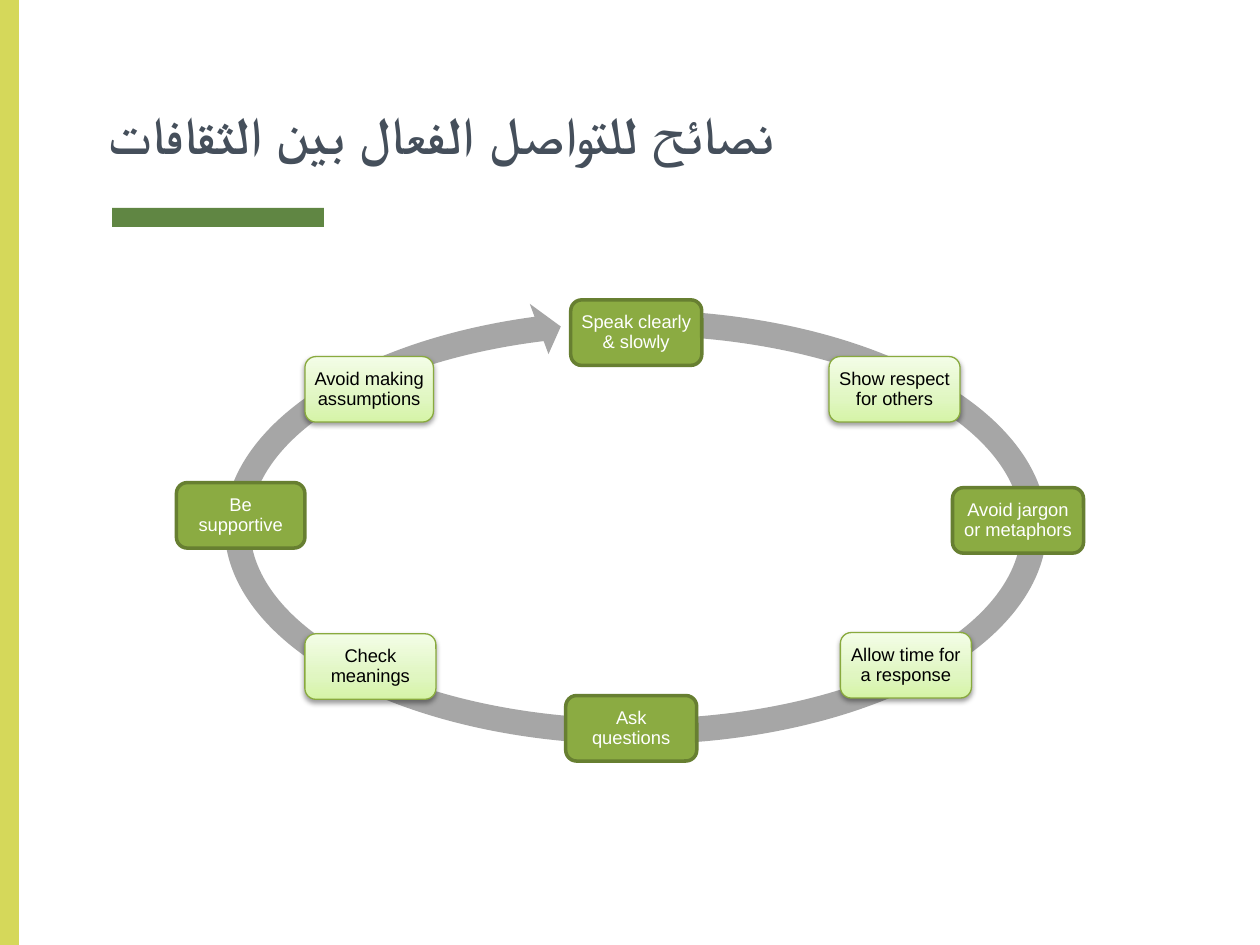
from lxml.etree import SubElement
from pptx import Presentation
from pptx.dml.color import RGBColor
from pptx.enum.shapes import MSO_SHAPE as Shape
from pptx.enum.text import MSO_ANCHOR as Anchor, MSO_AUTO_SIZE as AutoSize, PP_ALIGN as Align
from pptx.oxml.ns import qn
from pptx.util import Inches, Pt

PALE_STOPS = [(0, "D5F4A6"), (35, "E0F6C1"), (100, "F3FDE7")]
TIPS = [
    ("Speak clearly & slowly", 4.53, 2.38, 1.04),
    ("Show respect for others", 6.58, 2.83, 1.04),
    ("Avoid jargon or metaphors", 7.56, 3.87, 1.04),
    ("Allow time for a response", 6.67, 5.02, 1.04),
    ("Ask questions", 4.49, 5.52, 1.04),
    ("Check meanings", 2.42, 5.03, 1.04),
    ("Be supportive", 1.4, 3.83, 1.02),
    ("Avoid making assumptions", 2.42, 2.83, 1.02),
]


def color(hex_string):
    return RGBColor.from_string(hex_string)


def add_plain(page, kind, left, top, width, height, fill):
    shape = page.shapes.add_shape(
        kind, Inches(left), Inches(top), Inches(width), Inches(height))
    shape.shadow.inherit = False
    shape.fill.solid()
    shape.fill.fore_color.rgb = color(fill)
    shape.line.fill.background()
    return shape


def set_margins(frame, inches):
    frame.margin_left = frame.margin_right = Inches(inches)
    frame.margin_top = frame.margin_bottom = Inches(inches)


def add_text(frame, text, font_name, size, hex_string):
    frame.word_wrap = True
    para = frame.paragraphs[0]
    span = para.add_run()
    span.text = text
    span.font.name = font_name
    span.font.size = Pt(size)
    span.font.color.rgb = color(hex_string)
    return para, span


def place_title(page, text, left, top, width, height):
    title = page.shapes.title
    title.left, title.top = Inches(left), Inches(top)
    title.width, title.height = Inches(width), Inches(height)
    frame = title.text_frame
    frame.auto_size = AutoSize.NONE
    frame.vertical_anchor = Anchor.BOTTOM
    set_margins(frame, 0.1)
    para, span = add_text(frame, text, "Montserrat", 30, "454F5B")
    para.alignment = Align.LEFT
    span.font.bold = True
    SubElement(span.font._element, qn("a:cs"), typeface="Montserrat")


def make_pale(card):
    card.fill.gradient()
    card.fill.gradient_angle = 90
    stops = card._element.spPr.find(".//" + qn("a:gsLst"))
    for stop in list(stops):
        stops.remove(stop)
    for position, hex_string in PALE_STOPS:
        stop = SubElement(stops, qn("a:gs"), pos=str(position * 1000))
        SubElement(stop, qn("a:srgbClr"), val=hex_string)
    effects = card._element.spPr.find(qn("a:effectLst"))
    shadow = SubElement(effects, qn("a:outerShdw"), blurRad=str(Pt(3.1)),
                        dist=str(Pt(1.6)), dir="5400000", rotWithShape="0")
    shade = SubElement(shadow, qn("a:srgbClr"), val="000000")
    SubElement(shade, qn("a:alpha"), val="38000")


def add_card(page, text, left, top, width, height, pale):
    card = add_plain(page, Shape.ROUNDED_RECTANGLE, left, top, width, height, "8BAB42")
    if pale:
        make_pale(card)
    card.line.color.rgb = color("89AA3E" if pale else "677F31")
    card.line.width = Pt(0.75 if pale else 2)
    frame = card.text_frame
    frame.vertical_anchor = Anchor.MIDDLE
    set_margins(frame, 0.05)
    para, _ = add_text(frame, text, "Arial", 10.5, "000000" if pale else "FFFFFF")
    para.alignment = Align.CENTER
    para.line_spacing = 0.9


def add_cycle(page, left, top, width, height):
    ring = add_plain(page, Shape.CIRCULAR_ARROW, left, top, width, height, "A6A6A6")
    for index, value in enumerate([0.055, 3.307, 146.423, 168.782, 0.058]):
        ring.adjustments[index] = value
    for index, (text, card_left, card_top, card_width) in enumerate(TIPS):
        add_card(page, text, left + card_left - 1.67, top + card_top - 2.35,
                 card_width, 0.52, pale=index % 2 == 1)


def main():
    deck = Presentation()
    deck.slide_width, deck.slide_height = Inches(10), Inches(7.5)
    page = deck.slides.add_slide(deck.slide_layouts[5])
    add_plain(page, Shape.RECTANGLE, 0.89, 1.65, 1.68, 0.15, "608643")
    add_plain(page, Shape.RECTANGLE, 0, 0, 0.15, 7.5, "D5D85A")
    place_title(page, "نصائح للتواصل الفعال بين الثقافات", 0.76, 0, 8.49, 1.41)
    add_cycle(page, 1.67, 2.35, 6.75, 3.67)
    deck.save("out.pptx")


if __name__ == "__main__":
    main()
